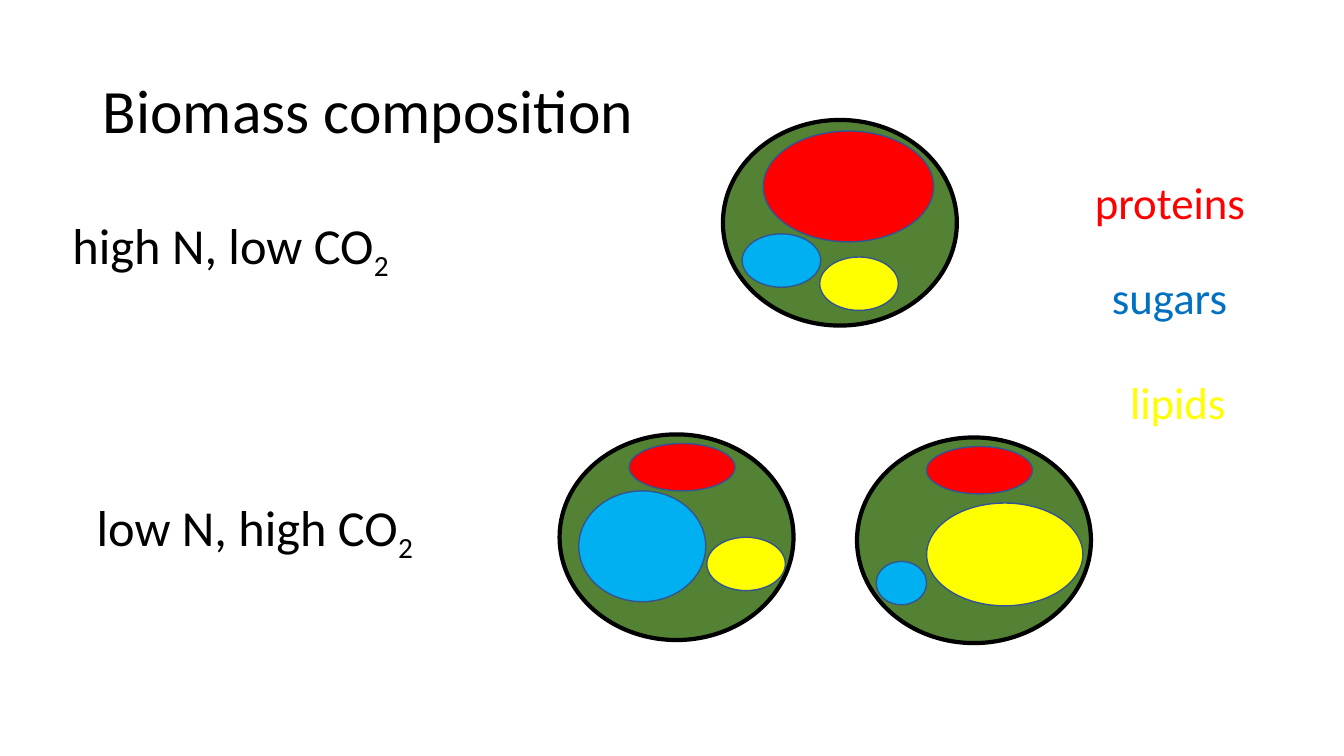
"""Build the biomass composition slide with three schematic cells and their legend."""
from dataclasses import dataclass

from pptx import Presentation
from pptx.dml.color import RGBColor
from pptx.enum.shapes import MSO_SHAPE
from pptx.enum.text import MSO_ANCHOR, MSO_AUTO_SIZE, PP_ALIGN
from pptx.slide import Slide
from pptx.text.text import TextFrame
from pptx.util import Inches, Pt

BLACK, GREEN, OUTLINE = "000000", "548235", "325491"
RED, YELLOW, SKY, BLUE = "FF0000", "FFFF00", "00B0F0", "0070C0"
CELL_SIZE = (2.32, 2.04)


@dataclass(frozen=True)
class Oval:
    left: float
    top: float
    width: float
    height: float
    fill: str
    line: str = OUTLINE
    weight: float = 1


@dataclass(frozen=True)
class Cell:
    left: float
    top: float
    contents: tuple[Oval, ...]


@dataclass(frozen=True)
class Label:
    text: str
    left: float
    top: float
    width: float
    height: float
    size: float
    color: str = BLACK
    subscript: str = ""


CELLS = (
    Cell(7.17, 1.19, (
        Oval(0.4, 0.11, 1.69, 1.1, RED),
        Oval(0.96, 1.36, 0.78, 0.53, YELLOW),
        Oval(0.19, 1.13, 0.78, 0.53, SKY),
    )),
    Cell(5.55, 4.31, (
        Oval(0.69, 0.09, 1.05, 0.47, RED),
        Oval(1.46, 1.02, 0.78, 0.53, YELLOW),
        Oval(0.19, 0.56, 1.26, 1.1, SKY),
    )),
    Cell(8.5, 4.34, (
        Oval(0.69, 0.09, 1.05, 0.47, RED),
        Oval(0.69, 0.65, 1.55, 1.02, YELLOW),
        Oval(0.19, 1.23, 0.5, 0.43, SKY),
    )),
)

LABELS = (
    Label("high N, low CO", 0.62, 2.07, 3.39, 0.71, 36, subscript="2"),
    Label("low N, high CO", 0.86, 4.87, 3.39, 0.71, 36, subscript="2"),
    Label("proteins", 10.76, 1.68, 1.71, 0.64, 32, RED),
    Label("sugars", 10.93, 2.63, 1.36, 0.64, 32, BLUE),
    Label("lipids", 11.11, 3.67, 1.16, 0.64, 32, YELLOW),
)


def rgb(value: str) -> RGBColor:
    return RGBColor.from_string(value)


def write(frame: TextFrame, text: str, *, size: float, color: str = BLACK,
          subscript: str = "", spacing: float = 1.0) -> None:
    paragraph = frame.paragraphs[0]
    paragraph.alignment = PP_ALIGN.LEFT
    paragraph.line_spacing = spacing
    for part, baseline in ((text, 0), (subscript, -25000)):
        if not part:
            continue
        run = paragraph.add_run()
        run.text = part
        run.font.name = "Calibri"
        run.font.size = Pt(size)
        run.font.color.rgb = rgb(color)
        if baseline:
            run.font._element.set("baseline", str(baseline))


def draw_oval(slide: Slide, oval: Oval, left: float = 0, top: float = 0) -> None:
    shape = slide.shapes.add_shape(
        MSO_SHAPE.OVAL, Inches(left + oval.left), Inches(top + oval.top),
        Inches(oval.width), Inches(oval.height))
    shape.shadow.inherit = False
    shape.fill.solid()
    shape.fill.fore_color.rgb = rgb(oval.fill)
    shape.line.color.rgb = rgb(oval.line)
    shape.line.width = Pt(oval.weight)


def draw_cell(slide: Slide, cell: Cell) -> None:
    draw_oval(slide, Oval(cell.left, cell.top, *CELL_SIZE, GREEN, BLACK, 3))
    for content in cell.contents:
        draw_oval(slide, content, cell.left, cell.top)


def draw_label(slide: Slide, label: Label) -> None:
    box = slide.shapes.add_textbox(
        Inches(label.left), Inches(label.top), Inches(label.width), Inches(label.height))
    box.text_frame.word_wrap = False
    box.text_frame.auto_size = MSO_AUTO_SIZE.SHAPE_TO_FIT_TEXT
    write(box.text_frame, label.text, size=label.size, color=label.color,
          subscript=label.subscript)


def place_title(slide: Slide, text: str) -> None:
    title = slide.shapes.title
    title.left, title.top = Inches(0.92), Inches(0.4)
    title.width, title.height = Inches(11.5), Inches(1.45)
    title.text_frame.vertical_anchor = MSO_ANCHOR.MIDDLE
    write(title.text_frame, text, size=44, spacing=0.9)


def main() -> None:
    deck = Presentation()
    deck.slide_width, deck.slide_height = Inches(13.33), Inches(7.5)
    slide = deck.slides.add_slide(deck.slide_layouts.get_by_name("Title Only"))
    place_title(slide, "Biomass composition")
    for cell in CELLS:
        draw_cell(slide, cell)
    for label in LABELS:
        draw_label(slide, label)
    deck.save("out.pptx")


if __name__ == "__main__":
    main()
